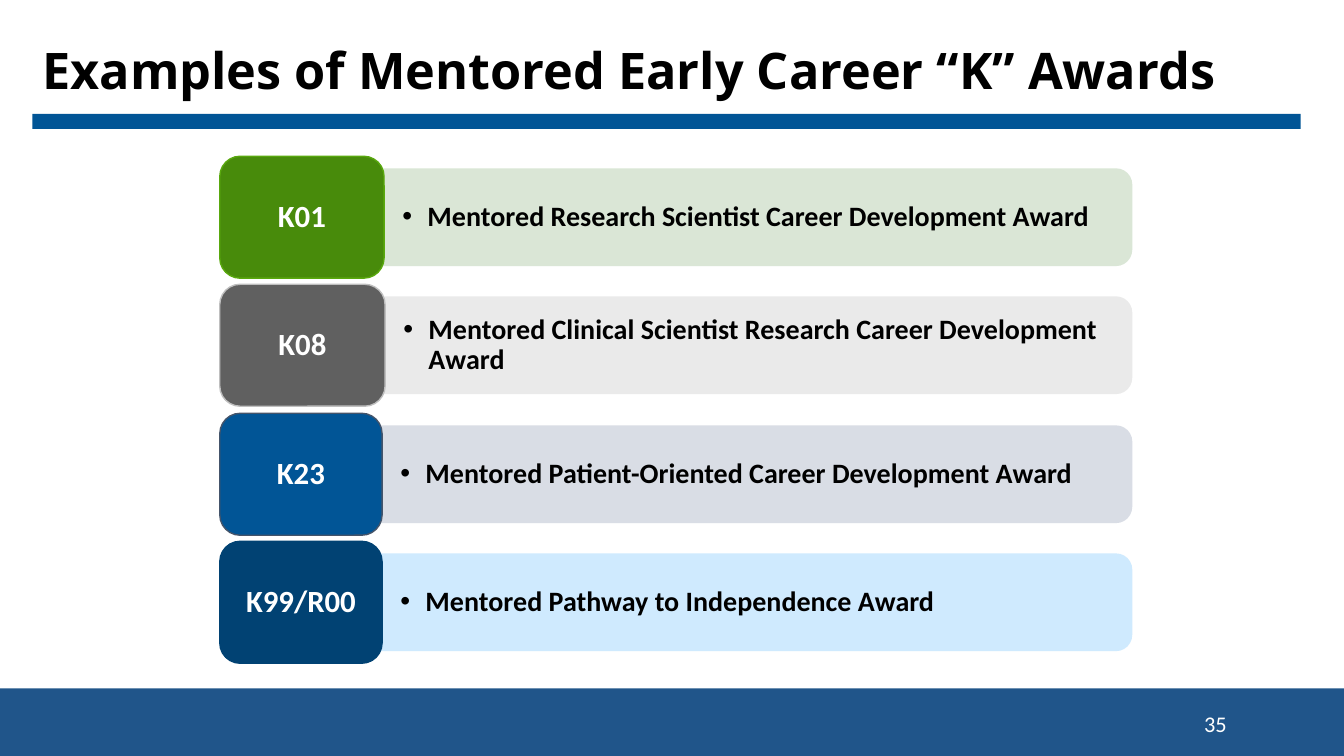
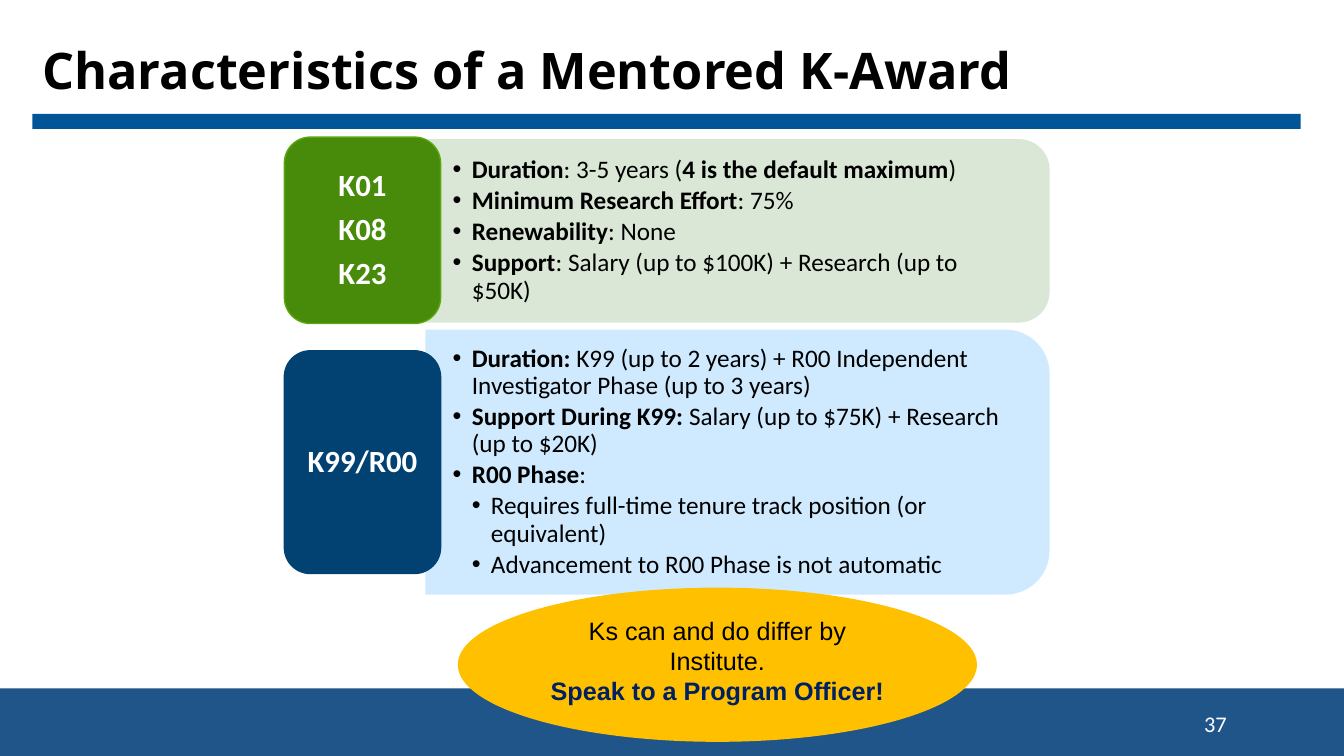
from dataclasses import dataclass

from lxml.etree import SubElement
from pptx import Presentation
from pptx.dml.color import RGBColor
from pptx.enum.shapes import MSO_SHAPE as Preset
from pptx.enum.text import MSO_ANCHOR as Anchor, PP_ALIGN as Align
from pptx.oxml.ns import qn
from pptx.util import Emu, Pt

EMU_PER_PX = 9144
SLIDE_WIDTH, SLIDE_HEIGHT = 1333, 750


@dataclass(frozen=True)
class Theme:
    """Colours, fonts and type sizes of the presentation."""

    footer: str = "20558A"
    blue: str = "015596"
    black: str = "000000"
    white: str = "FFFFFF"
    green: str = "488B0B"
    green_line: str = "59A80E"
    green_tint: str = "D6E4D2"
    grey: str = "606060"
    grey_line: str = "BFBFBF"
    grey_tint: str = "E8E8E8"
    blue_line: str = "44546A"
    blue_tint: str = "D5DAE3"
    navy: str = "014273"
    sky_tint: str = "CAE8FE"
    gold: str = "FFC000"
    emphasis: str = "002060"
    title_font: str = "Open Sans"
    body_font: str = "Calibri"
    callout_font: str = "Arial"
    title_size: int = 36
    tag_size: int = 22
    award_size: int = 20
    detail_size: int = 18
    number_size: int = 16
    panel_alpha: int = 90
    line_spacing: float = 0.9


THEME = Theme()

AWARDS = [
    ("K01", "Mentored Research Scientist Career Development Award", 163,
     THEME.green, THEME.green_line, THEME.green_tint),
    ("K08", "Mentored Clinical Scientist Research Career Development Award", 164,
     THEME.grey, THEME.grey_line, THEME.grey_tint),
    ("K23", "Mentored Patient-Oriented Career Development Award", 161,
     THEME.blue, THEME.blue_line, THEME.blue_tint),
    ("K99/R00", "Mentored Pathway to Independence Award", 161,
     THEME.navy, THEME.navy, THEME.sky_tint),
]

MENTORED_DETAILS = [
    (1, [("Duration", True), (": 3-5 years (", False),
         ("4 is the default maximum", True), (")", False)]),
    (1, [("Minimum Research Effort", True), (": 75%", False)]),
    (1, [("Renewability", True), (": None", False)]),
    (1, [("Support", True), (": Salary (up to $100K) + Research (up to $50K)", False)]),
]

PATHWAY_DETAILS = [
    (1, [("Duration: ", True),
         ("K99 (up to 2 years) + R00 Independent Investigator Phase (up to 3 years)", False)]),
    (1, [("Support During K99: ", True),
         ("Salary (up to $75K) + Research (up to $20K)", False)]),
    (1, [("R00 Phase", True), (":", False)]),
    (2, [("Requires full-time tenure track position (or equivalent)", False)]),
    (2, [("Advancement to R00 Phase is not automatic", False)]),
]


def px(length):
    """Turn px into EMU."""
    return Emu(round(length * EMU_PER_PX))


def add_preset(slide, preset, box, fill, line=None):
    """Add a flat filled shape in the given box."""
    shape = slide.shapes.add_shape(preset, *map(px, box))
    shape.shadow.inherit = False
    shape.fill.solid()
    shape.fill.fore_color.rgb = RGBColor.from_string(fill)
    if line:
        shape.line.color.rgb = RGBColor.from_string(line)
        shape.line.width = Pt(1)
    else:
        shape.line.fill.background()
    return shape


def prepare_frame(shape, anchor=Anchor.MIDDLE, insets=(10, 5)):
    """Set wrapping, anchor and insets of a shape's text frame."""
    frame = shape.text_frame
    frame.word_wrap = True
    frame.vertical_anchor = anchor
    frame.margin_left = frame.margin_right = px(insets[0])
    frame.margin_top = frame.margin_bottom = px(insets[1])
    return frame


def add_text_box(slide, box, **options):
    """Add a text box and return its text frame."""
    return prepare_frame(slide.shapes.add_textbox(*map(px, box)), **options)


def next_paragraph(frame, index, align=Align.LEFT, spacing=None, after=None):
    """Return the paragraph at the index, adding it after the first."""
    paragraph = frame.add_paragraph() if index else frame.paragraphs[0]
    paragraph.alignment = align
    paragraph.line_spacing = spacing
    if after:
        paragraph.space_after = Pt(after)
    return paragraph


def add_run(paragraph, text, size, color, font=THEME.body_font, bold=False):
    """Add one styled run."""
    run = paragraph.add_run()
    run.text = text
    run.font.name = font
    run.font.size = Pt(size)
    run.font.bold = bold
    run.font.color.rgb = RGBColor.from_string(color)


def set_bullet(paragraph, level, indent):
    """Give a paragraph a hanging bullet."""
    properties = paragraph._p.get_or_add_pPr()
    properties.set("marL", str(px(level * indent)))
    properties.set("indent", str(-px(indent)))
    SubElement(properties, qn("a:buFont")).set("typeface", "Arial")
    SubElement(properties, qn("a:buChar")).set("char", "•")


def add_frame_slide(presentation, title, number):
    """Add a slide with the shared title, rule, footer and number."""
    slide = presentation.slides.add_slide(presentation.slide_layouts[6])
    add_preset(slide, Preset.RECTANGLE, (0, 683, SLIDE_WIDTH, 67), THEME.footer)
    add_preset(slide, Preset.RECTANGLE, (32, 113, 1258, 15), THEME.blue)
    heading = next_paragraph(add_text_box(slide, (32, 32, 1258, 81)), 0,
                             spacing=THEME.line_spacing)
    add_run(heading, title, THEME.title_size, THEME.black, THEME.title_font, True)
    page = next_paragraph(add_text_box(slide, (1170, 701, 71, 34)), 0, Align.CENTER)
    add_run(page, number, THEME.number_size, THEME.white)
    return slide


def add_panel(slide, box, fill, details, size, indent):
    """Add a tinted panel rounded on its right, with bulleted text."""
    left, top, width, height = box
    upright = (left + (width - height) / 2, top + (height - width) / 2, height, width)
    shape = add_preset(slide, Preset.ROUND_2_SAME_RECTANGLE, upright, fill)
    shape.rotation = 90
    color = shape._element.spPr.find(qn("a:solidFill"))[0]
    SubElement(color, qn("a:alpha")).set("val", str(THEME.panel_alpha * 1000))
    corner = height // 20
    frame = add_text_box(slide, (left, top + corner, width - corner, height - 2 * corner),
                         insets=(27, 14))
    for index, (level, runs) in enumerate(details):
        paragraph = next_paragraph(frame, index)
        set_bullet(paragraph, level, indent)
        paragraph.line_spacing = THEME.line_spacing
        paragraph.space_after = Pt(size * 0.15)
        for text, bold in runs:
            add_run(paragraph, text, size, THEME.black, bold=bold)


def add_tag(slide, box, fill, line, labels):
    """Add a rounded tag with one centred label a line."""
    shape = add_preset(slide, Preset.ROUNDED_RECTANGLE, box, fill, line)
    frame = prepare_frame(shape, insets=(9, 5))
    for index, label in enumerate(labels):
        paragraph = next_paragraph(frame, index, Align.CENTER, THEME.line_spacing,
                                   THEME.tag_size * 0.35)
        add_run(paragraph, label, THEME.tag_size, THEME.white, bold=True)


def add_award_rows(slide, box):
    """Spread the award rows evenly over the box."""
    left, top, width, height = box
    tag_height, panel_height, overlap = 121, 97, 9
    step = (height - tag_height) / (len(AWARDS) - 1)
    for index, (code, name, tag_width, fill, line, tint) in enumerate(AWARDS):
        row_top = top + round(index * step)
        panel_left = left + tag_width - overlap
        panel = (panel_left, row_top + (tag_height - panel_height) // 2,
                 left + width - panel_left, panel_height)
        add_panel(slide, panel, tint, [(1, [(name, True)])], THEME.award_size, 25)
        add_tag(slide, (left, row_top, tag_width, tag_height), fill, line, [code])


def add_detail_card(slide, box, tag_height, colors, labels, details):
    """Add a panel of details with a tag centred on its left."""
    left, top, width, height = box
    fill, line, tint = colors
    tag_width, overlap = 155, 15
    shift = tag_width - overlap
    add_panel(slide, (left + shift, top, width - shift, height), tint, details,
              THEME.detail_size, 19)
    tag_top = top + (height - tag_height) // 2
    add_tag(slide, (left, tag_top, tag_width, tag_height), fill, line, labels)


def add_callout(slide, box):
    """Add the oval advice in the box."""
    shape = add_preset(slide, Preset.OVAL, box, THEME.gold)
    frame = prepare_frame(shape, Anchor.TOP)
    lines = [("Ks can and do differ by Institute.", THEME.black, False),
             ("Speak to a Program Officer!", THEME.emphasis, True)]
    for index, (text, color, bold) in enumerate(lines):
        paragraph = next_paragraph(frame, index, Align.CENTER)
        add_run(paragraph, text, THEME.detail_size, color, THEME.callout_font, bold)


def build_examples(presentation):
    """Build the slide of award examples."""
    slide = add_frame_slide(presentation, "Examples of Mentored Early Career “K” Awards", "35")
    add_award_rows(slide, (218, 155, 905, 503))


def build_characteristics(presentation):
    """Build the slide of award characteristics."""
    slide = add_frame_slide(presentation, "Characteristics of a Mentored K-Award", "37")
    add_detail_card(slide, (282, 138, 759, 182), 185,
                    (THEME.green, THEME.green_line, THEME.green_tint),
                    ["K01", "K08", "K23"], MENTORED_DETAILS)
    add_detail_card(slide, (282, 327, 759, 263), 221,
                    (THEME.navy, THEME.navy, THEME.sky_tint),
                    ["K99/R00"], PATHWAY_DETAILS)
    add_callout(slide, (454, 583, 515, 153))


def main():
    """Build and save the presentation."""
    presentation = Presentation()
    presentation.slide_width = px(SLIDE_WIDTH)
    presentation.slide_height = px(SLIDE_HEIGHT)
    build_examples(presentation)
    build_characteristics(presentation)
    presentation.save("out.pptx")


if __name__ == "__main__":
    main()
